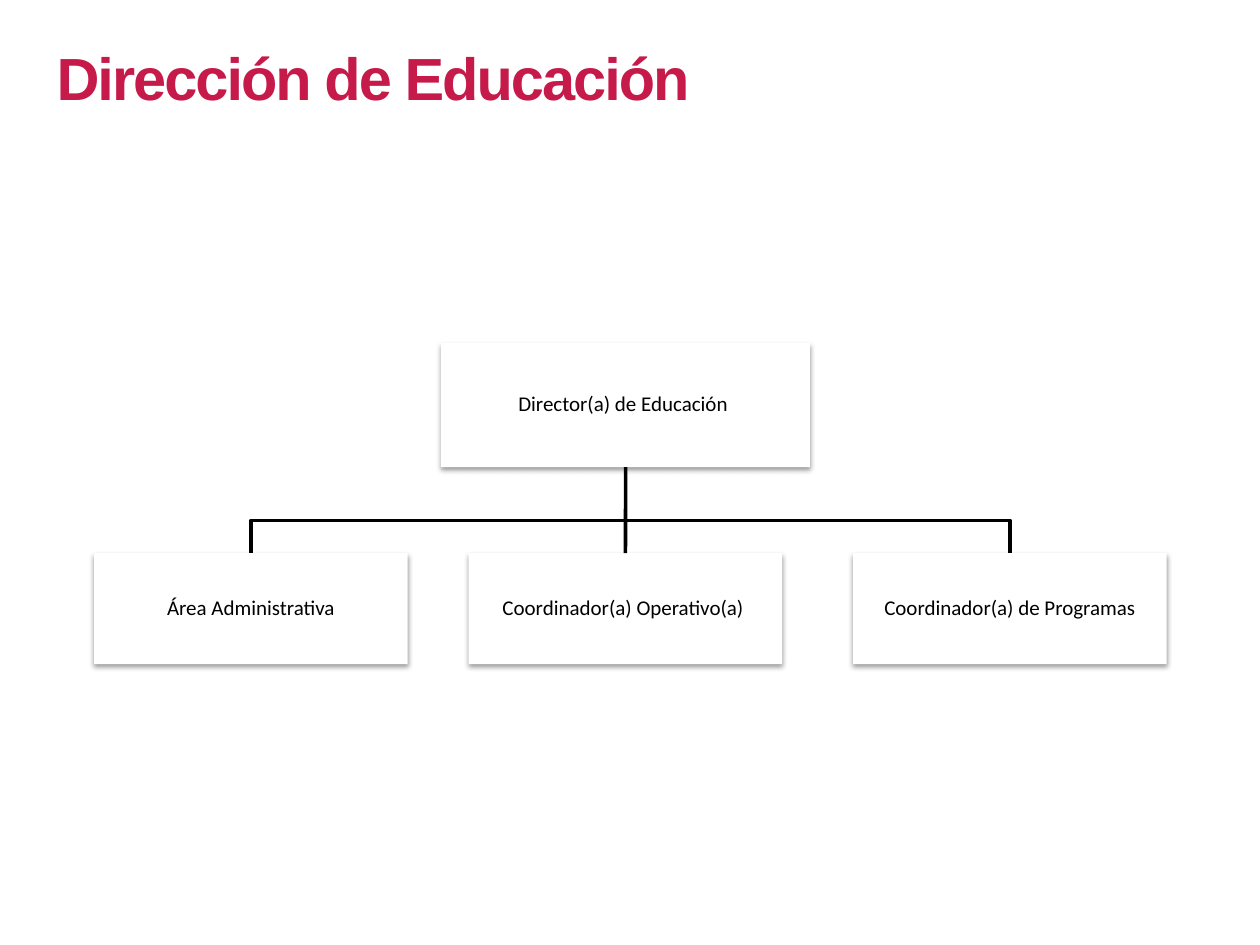
from dataclasses import dataclass

from lxml import etree
from pptx import Presentation
from pptx.dml.color import RGBColor
from pptx.enum.shapes import MSO_CONNECTOR, MSO_SHAPE
from pptx.enum.text import MSO_ANCHOR, MSO_AUTO_SIZE, PP_ALIGN
from pptx.oxml.ns import qn
from pptx.util import Cm, Pt

RECTANGLE = MSO_SHAPE.RECTANGLE
STRAIGHT = MSO_CONNECTOR.STRAIGHT
MIDDLE = MSO_ANCHOR.MIDDLE
GROW = MSO_AUTO_SIZE.SHAPE_TO_FIT_TEXT
LEFT, CENTER = PP_ALIGN.LEFT, PP_ALIGN.CENTER
TOP_SIDE, BOTTOM_SIDE = 0, 2


@dataclass(frozen=True)
class Theme:
    """Colours, fonts and sizes of the slide."""
    title_color: str = "C51A4A"
    text_color: str = "000000"
    line_color: str = "000000"
    box_color: str = "FFFFFF"
    shadow_color: str = "000000"
    title_font: str = "Arial"
    box_font: str = "Calibri"
    title_size: float = 34
    box_size: float = 12
    line_width: float = 2


def write_text(frame, text, *, font, size, color, bold=False, align=LEFT,
               line_spacing=None, space_after=None, tracking=None):
    """Write one formatted paragraph into a text frame."""
    paragraph = frame.paragraphs[0]
    paragraph.alignment = align
    paragraph.line_spacing = line_spacing
    paragraph.space_after = space_after
    run = paragraph.add_run()
    run.text = text
    run.font.name, run.font.size, run.font.bold = font, Pt(size), bold
    run.font.color.rgb = RGBColor.from_string(color)
    if tracking is not None:
        run.font._element.set("spc", str(round(tracking * 100)))


class OrganizationChart:
    """Draws the parts of an organization chart on one slide."""

    def __init__(self, slide, theme):
        """Keep the slide and its theme."""
        self.slide = slide
        self.theme = theme

    def title(self, text, left, top, width, height):
        """Add the slide title."""
        shape = self.slide.shapes.add_textbox(Cm(left), Cm(top), Cm(width), Cm(height))
        shape.text_frame.word_wrap = True
        shape.text_frame.auto_size = GROW
        write_text(shape.text_frame, text, font=self.theme.title_font,
                   size=self.theme.title_size, color=self.theme.title_color,
                   bold=True, tracking=-1.1)

    def box(self, text, left, top, width, height):
        """Add a shadowed box with a centred label."""
        shape = self.slide.shapes.add_shape(
            RECTANGLE, Cm(left), Cm(top), Cm(width), Cm(height))
        shape.fill.solid()
        shape.fill.fore_color.rgb = RGBColor.from_string(self.theme.box_color)
        shape.line.fill.background()
        self.add_shadow(shape)
        frame = shape.text_frame
        frame.word_wrap = True
        frame.vertical_anchor = MIDDLE
        frame.margin_left = frame.margin_right = Cm(0.03)
        frame.margin_top = frame.margin_bottom = Cm(0.03)
        write_text(frame, text, font=self.theme.box_font, size=self.theme.box_size,
                   color=self.theme.text_color, align=CENTER,
                   line_spacing=0.9, space_after=Pt(4.2))
        return shape

    def add_shadow(self, shape):
        """Give a shape a soft shadow below it."""
        shape.shadow.inherit = False
        effects = shape._element.spPr.find(qn("a:effectLst"))
        shadow = etree.SubElement(
            effects, qn("a:outerShdw"), blurRad=str(Pt(3.1)), dist=str(Pt(1.6)),
            dir="5400000", rotWithShape="0")
        color = etree.SubElement(shadow, qn("a:srgbClr"), val=self.theme.shadow_color)
        etree.SubElement(color, qn("a:alpha"), val="38000")

    def style_line(self, line):
        """Apply the branch line style."""
        line.color.rgb = RGBColor.from_string(self.theme.line_color)
        line.width = Pt(self.theme.line_width)

    def straight_branch(self, parent, child):
        """Join a parent to the child straight below it."""
        connector = self.slide.shapes.add_connector(STRAIGHT, 0, 0, 0, 0)
        connector.begin_connect(parent, BOTTOM_SIDE)
        connector.end_connect(child, TOP_SIDE)
        self.style_line(connector.line)
        etree.SubElement(connector._element.spPr, qn("a:effectLst"))

    def bent_branch(self, parent, child, bend):
        """Join a parent to a child at its side with a bent line."""
        start = parent.left + parent.width // 2
        end = child.left + child.width // 2
        builder = self.slide.shapes.build_freeform(start, parent.top + parent.height)
        builder.add_line_segments(
            [(start, Cm(bend)), (end, Cm(bend)), (end, child.top)], close=False)
        shape = builder.convert_to_shape()
        shape.fill.background()
        shape.shadow.inherit = False
        self.style_line(shape.line)


def main():
    """Build and save the presentation."""
    presentation = Presentation()
    presentation.slide_width, presentation.slide_height = Cm(25.4), Cm(19.05)
    slide = presentation.slides.add_slide(presentation.slide_layouts[6])
    chart = OrganizationChart(slide, Theme())

    chart.title("Dirección de Educación", 0.89, 0.71, 14.53, 1.75)
    director = chart.box("Director(a) de Educación ", 8.89, 6.91, 7.44, 2.51)
    areas = (("Área Administrativa", 1.9),
             ("Coordinador(a) Operativo(a) ", 9.45),
             ("Coordinador(a) de Programas", 17.2))
    administration, operations, programs = [
        chart.box(text, left, 11.15, 6.32, 2.24) for text, left in areas]

    chart.straight_branch(director, operations)
    for area in (administration, programs):
        chart.bent_branch(director, area, 10.49)

    presentation.save("out.pptx")


if __name__ == "__main__":
    main()
